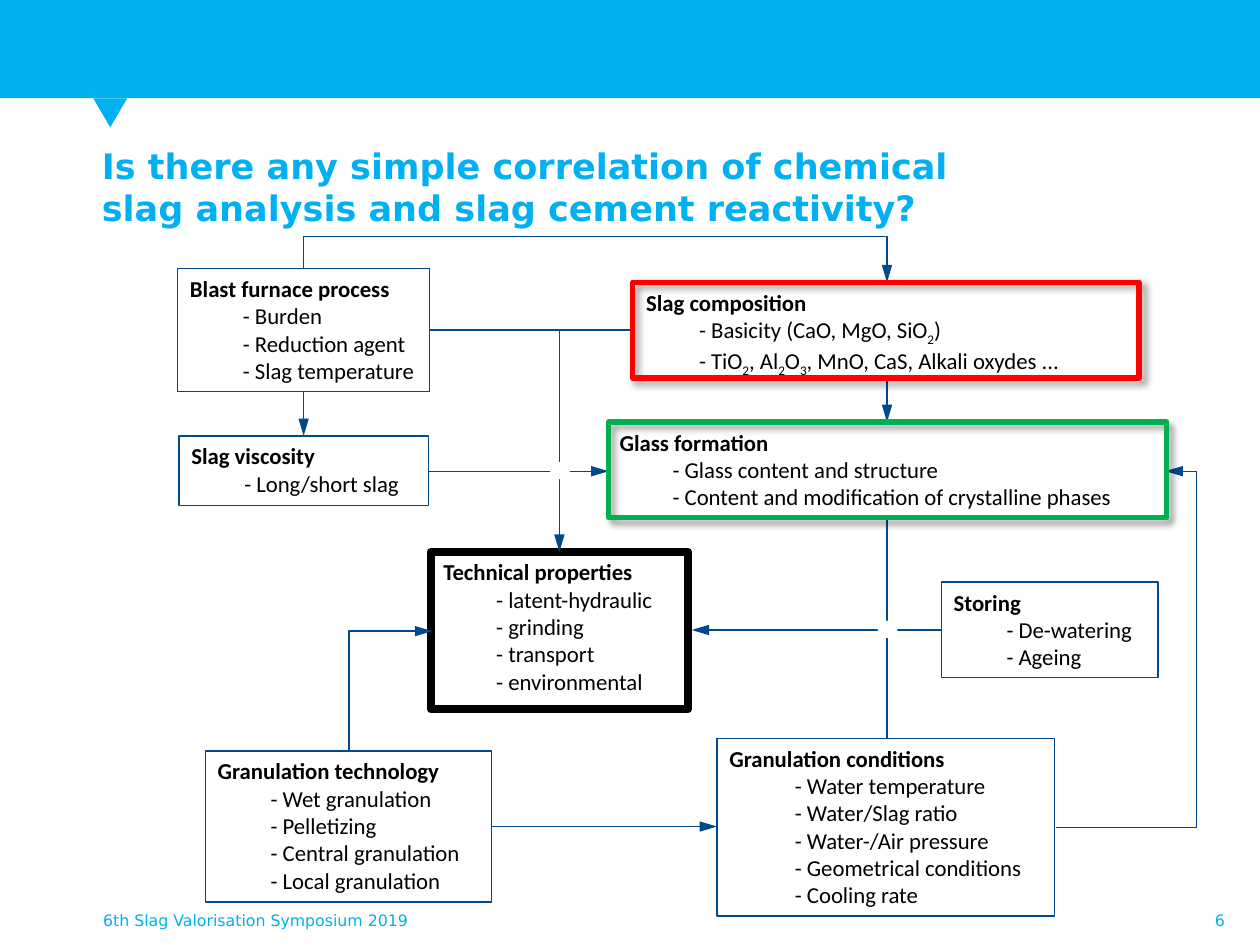
from lxml.etree import SubElement
from pptx import Presentation
from pptx.dml.color import RGBColor
from pptx.enum.shapes import MSO_CONNECTOR, MSO_SHAPE
from pptx.enum.text import MSO_ANCHOR, PP_ALIGN
from pptx.oxml.ns import qn
from pptx.util import Emu, Pt

SCALE = 9144
SKY = RGBColor(0x00, 0xB0, 0xF0)
NAVY = RGBColor(0x00, 0x49, 0x8E)
RED = RGBColor(0xFF, 0x00, 0x00)
GREEN = RGBColor(0x00, 0xB0, 0x50)
BLACK = RGBColor(0x00, 0x00, 0x00)
WHITE = RGBColor(0xFF, 0xFF, 0xFF)


def px(*vals):
    return [Emu(val * SCALE) for val in vals]


def write(frame, text, size=13, font="Calibri", color=BLACK, bold=False,
          align=PP_ALIGN.LEFT, indent=0, first=True):
    para = frame.paragraphs[0] if first else frame.add_paragraph()
    para.alignment = align
    if indent:
        para._p.get_or_add_pPr().set("marL", str(indent * SCALE))
    head, *rest = text.split("_")
    parts = [(head, False)]
    for part in rest:
        parts += [(part[0], True), (part[1:], False)]
    for part, sub in parts:
        run = para.add_run()
        run.text = part
        run.font.size = Pt(size)
        run.font.name = font
        run.font.bold = bold
        run.font.color.rgb = color
        if sub:
            run._r.get_or_add_rPr().set("baseline", "-25000")


def label(slide, box, lines, anchor=MSO_ANCHOR.TOP, **form):
    frame = slide.shapes.add_textbox(*px(*box)).text_frame
    frame.word_wrap = True
    frame.vertical_anchor = anchor
    for i, line in enumerate(lines):
        write(frame, line, font="DejaVu Sans", color=SKY, first=i == 0, **form)


def block(slide, box, kind=MSO_SHAPE.RECTANGLE, fill=None, line=None, width=0.75):
    shape = slide.shapes.add_shape(kind, *px(*box))
    shape.shadow.inherit = False
    if fill is None:
        shape.fill.background()
    else:
        shape.fill.solid()
        shape.fill.fore_color.rgb = fill
    if line is None:
        shape.line.fill.background()
    else:
        shape.line.color.rgb = line
        shape.line.width = Pt(width)
    return shape


def node(slide, box, title, items, indent=42, line=NAVY, width=0.75):
    frame = block(slide, box, line=line, width=width).text_frame
    frame.word_wrap = True
    frame.vertical_anchor = MSO_ANCHOR.TOP
    write(frame, title, bold=True)
    for item in items:
        write(frame, "- " + item, indent=indent, first=False)


def glow(slide, box, line):
    shape = block(slide, box, line=line, width=3)
    effect = shape._element.spPr.find(qn("a:effectLst"))
    shade = SubElement(effect, qn("a:outerShdw"), blurRad=str(Pt(4)),
                       dist=str(Pt(3)), dir="2700000", algn="tl", rotWithShape="0")
    tint = SubElement(shade, qn("a:srgbClr"), val=str(BLACK))
    SubElement(tint, qn("a:alpha"), val="40000")


def link(slide, ends, arrow=True, kind=MSO_CONNECTOR.STRAIGHT):
    wire = slide.shapes.add_connector(kind, *px(*ends))
    wire.line.color.rgb = NAVY
    wire.line.width = Pt(0.75)
    if arrow:
        SubElement(wire.line._get_or_add_ln(), qn("a:tailEnd"),
                   type="triangle", w="med", len="lg")
    SubElement(wire._element.spPr, qn("a:effectLst"))
    return wire


def elbow(slide, box, turn, flips, adjust=None):
    x, y, w, h = box
    wire = link(slide, (x, y, x + w, y + h), kind=MSO_CONNECTOR.ELBOW)
    props = wire._element.spPr
    frame = props.find(qn("a:xfrm"))
    frame.set("rot", str(turn * 60000))
    for flip in flips:
        frame.set("flip" + flip, "1")
    geom = props.find(qn("a:prstGeom"))
    if adjust is None:
        geom.set("prst", "bentConnector2")
    else:
        SubElement(geom.find(qn("a:avLst")), qn("a:gd"),
                   name="adj1", fmla=f"val {adjust}")


def banner(slide, x, y, w, h):
    block(slide, (x, y, w, h), fill=SKY)
    tip = block(slide, (x + 74, y + h, 27, 23),
                MSO_SHAPE.ISOSCELES_TRIANGLE, fill=SKY)
    tip.rotation = 180


def footer(slide, x, y, w, h):
    form = dict(size=9, anchor=MSO_ANCHOR.MIDDLE)
    label(slide, (x, y, 338, h), ["6th Slag Valorisation Symposium 2019"], **form)
    label(slide, (x + w - 233, y, 233, h), ["6"], align=PP_ALIGN.RIGHT, **form)


def flow(slide, x, y):
    def at(a, b, *size):
        return (x + a, y + b, *size)

    mid = 563
    node(slide, at(428, 398, 268, 141), "Granulation conditions",
         ["Water temperature", "Water/Slag ratio", "Water-/Air pressure",
          "Geometrical conditions", "Cooling rate"], indent=52)
    node(slide, at(22, 408, 227, 120), "Granulation technology",
         ["Wet granulation", "Pelletizing", "Central granulation",
          "Local granulation"])
    node(slide, at(362, 36, 401, 76), "Slag composition",
         ["Basicity (CaO, MgO, SiO_2)",
          "TiO_2, Al_2O_3, MnO, CaS, Alkali oxydes ..."])
    node(slide, at(0, 25, 200, 98), "Blast furnace process",
         ["Burden", "Reduction agent", "Slag temperature"])
    node(slide, at(1, 158, 198, 55), "Slag viscosity", ["Long/short slag"])
    node(slide, at(201, 250, 204, 125), "Technical properties",
         ["latent-hydraulic", "grinding", "transport", "environmental"],
         line=BLACK, width=4.5)
    node(slide, at(606, 274, 172, 76), "Storing", ["De-watering", "Ageing"])
    node(slide, at(341, 147, 443, 76), "Glass formation",
         ["Glass content and structure",
          "Content and modification of crystalline phases"])

    for a, b, c, d, arrow in [
        (100, 122, 100, 158, True),
        (mid, 112, mid, 147, True),
        (606, 312, 408, 312, True),
        (199, 186, 342, 186, True),
        (249, 468, 428, 468, True),
        (200, 74, 309, 74, False),
        (mid, 224, mid, 312, False),
        (mid, 398, mid, 312, False),
    ]:
        link(slide, at(a, b, x + c, y + d), arrow)

    elbow(slide, at(326, -201, 11, 463), 270, "H", -230400)
    elbow(slide, at(121, 328, 96, 66), 90, "HV")
    elbow(slide, at(697, 186, 87, 283), 0, "V", 128600)
    elbow(slide, at(303, 74, 59, 176), 180, "V")

    glow(slide, at(361, 36, 402, 76), RED)
    glow(slide, at(342, 147, 443, 76), GREEN)
    for a, b in [(297, 180), (557, 306)]:
        block(slide, at(a, b, 13, 11), MSO_SHAPE.OVAL, WHITE, WHITE, 2)


def main():
    deck = Presentation()
    deck.slide_width, deck.slide_height = px(1000, 750)
    slide = deck.slides.add_slide(deck.slide_layouts[6])
    banner(slide, 0, 0, 1000, 78)
    label(slide, (71, 110, 929, 94),
          ["Is there any simple correlation of chemical",
           "slag analysis and slag cement reactivity?"], size=20, bold=True)
    footer(slide, 72, 710, 910, 40)
    flow(slide, 141, 188)
    deck.save("out.pptx")


if __name__ == "__main__":
    main()
